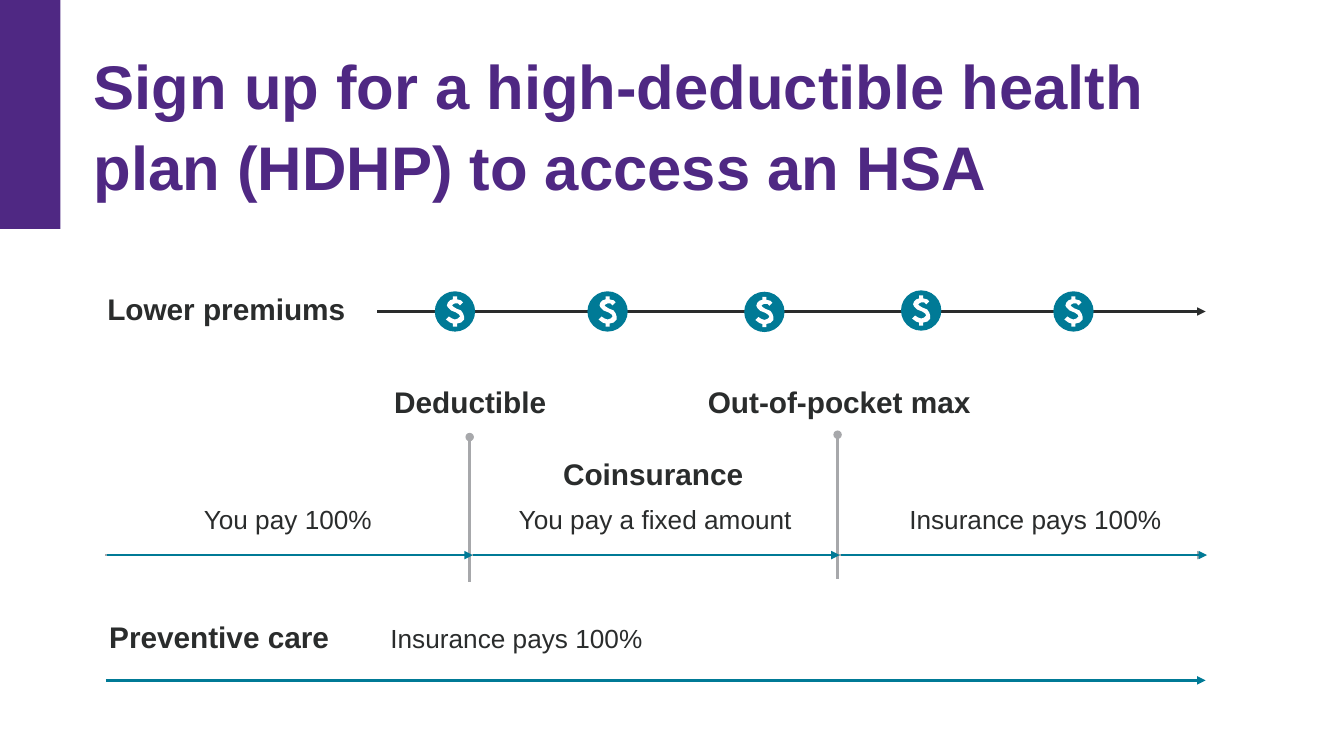
"""Build a slide explaining how a high-deductible health plan shares costs."""
from pptx import Presentation
from pptx.dml.color import RGBColor
from pptx.enum.shapes import MSO_CONNECTOR, MSO_SHAPE
from pptx.enum.text import MSO_ANCHOR, MSO_AUTO_SIZE, PP_ALIGN
from pptx.oxml.ns import qn
from pptx.util import Pt
from lxml.etree import SubElement

COLORS = {"purple": "4F2883", "teal": "007A96", "ink": "2A2C2C",
          "grey": "A7A8AB", "white": "FFFFFF"}
FONT = "Arial"
TITLE = "Sign up for a high-deductible health plan (HDHP) to access an HSA"

HEADINGS = [
    ("Lower premiums", 67, 198, 201, PP_ALIGN.LEFT),
    ("Deductible", 260.6, 264.2, 150.5, PP_ALIGN.CENTER),
    ("Out-of-pocket max", 478.8, 264.2, 241.2, PP_ALIGN.CENTER),
    ("Coinsurance", 334.8, 316, 263.5, PP_ALIGN.CENTER),
    ("Preventive care", 68.4, 432, 201, PP_ALIGN.LEFT),
]
NOTES = [
    ("You pay 100%", 75.6, 350, 260, PP_ALIGN.CENTER),
    ("You pay a fixed amount", 337.7, 350, 260.6, PP_ALIGN.CENTER),
    ("Insurance pays 100%", 600.5, 350, 278, PP_ALIGN.CENTER),
    ("Insurance pays 100%", 269.3, 434.9, 244, PP_ALIGN.LEFT),
]
DIVIDERS = [(335.5, 312.2), (598.3, 310.5)]
DIVIDER_H = 103.3
PHASES = [76.2, 338.2, 600.6]
PHASE_W, PHASE_Y = 261.6, 396.5
AXIS_LEFT, AXIS_RIGHT = 75.6, 861.2
PREMIUM_LEFT, PREMIUM_Y, PREVENTIVE_Y = 269.3, 222.5, 486
COINS = [(325, 222.5), (434, 222.5), (546, 222.8), (658, 221.8), (766.8, 222.5)]
COIN_D, DOLLAR_UNIT = 28.8, 0.72
DOLLAR = [(9, 8), (6, 11), (2, 12), (2, 15), (-2, 15), (-2, 12), (-5, 11),
          (-9, 8), (-6, 5), (-3, 7), (0, 8), (3, 7), (5, 5), (4, 3), (1, 1),
          (-4, -1), (-7, -4), (-8, -6), (-7, -9), (-5, -11), (-2, -12),
          (-2, -15), (2, -15), (2, -12), (6, -11), (8, -9), (5, -6), (3, -8),
          (0, -8), (-2, -7), (-3, -6), (-2, -5), (1, -3), (6, -1), (8, 2),
          (9, 5)]


def rgb(name):
    return RGBColor.from_string(COLORS[name])


def style_text(p, size, color, bold, align):
    p.alignment = align
    for r in p.runs:
        r.font.name, r.font.size, r.font.bold = FONT, Pt(size), bold
        r.font.color.rgb = rgb(color)


def fill_plain(sp, color):
    sp.shadow.inherit = False
    sp.fill.solid()
    sp.fill.fore_color.rgb = rgb(color)
    sp.line.fill.background()


def add_label(shapes, text, x, y, w, align, size, bold):
    tb = shapes.add_textbox(Pt(x), Pt(y), Pt(w), Pt(size * 1.15 + 19.2))
    tf = tb.text_frame
    tf.word_wrap = True
    tf.margin_left = tf.margin_right = tf.margin_top = tf.margin_bottom = Pt(9.6)
    tf.text = text
    style_text(tf.paragraphs[0], size, "ink", bold, align)


def add_line(shapes, x1, y1, x2, y2, color, head=None, tail=None):
    ln = shapes.add_connector(MSO_CONNECTOR.STRAIGHT, Pt(x1), Pt(y1), Pt(x2), Pt(y2))
    ln.line.color.rgb = rgb(color)
    ln.line.width = Pt(2)
    sp_pr = ln._element.spPr
    for tag, kind in (("a:headEnd", head), ("a:tailEnd", tail)):
        if kind:
            SubElement(sp_pr.find(qn("a:ln")), qn(tag), type=kind)
    SubElement(sp_pr, qn("a:effectLst"))


def add_coin(shapes, cx, cy):
    r = COIN_D / 2
    disc = shapes.add_shape(MSO_SHAPE.OVAL, Pt(cx - r), Pt(cy - r), Pt(COIN_D), Pt(COIN_D))
    fill_plain(disc, "teal")
    fb = shapes.build_freeform(*DOLLAR[0], scale=Pt(DOLLAR_UNIT))
    fb.add_line_segments(DOLLAR[1:], close=True)
    fill_plain(fb.convert_to_shape(Pt(cx), Pt(cy)), "white")


def main():
    prs = Presentation()
    prs.slide_width, prs.slide_height = Pt(960), Pt(540)
    slide = prs.slides.add_slide(prs.slide_layouts[5])
    shapes = slide.shapes

    bar = shapes.add_shape(MSO_SHAPE.RECTANGLE, 0, 0, Pt(43.2), Pt(163.6))
    fill_plain(bar, "purple")

    title = shapes.title
    title.left, title.top, title.width, title.height = Pt(67), Pt(28.8), Pt(853), Pt(113)
    tf = title.text_frame
    tf.text = TITLE
    tf.word_wrap = True
    tf.auto_size = MSO_AUTO_SIZE.NONE
    tf.vertical_anchor = MSO_ANCHOR.TOP
    tf.margin_left = tf.margin_right = tf.margin_top = tf.margin_bottom = 0
    tf.paragraphs[0].line_spacing = 1.1
    style_text(tf.paragraphs[0], 44, "purple", True, PP_ALIGN.LEFT)

    add_line(shapes, PREMIUM_LEFT, PREMIUM_Y, AXIS_RIGHT, PREMIUM_Y, "ink", tail="triangle")
    for cx, cy in COINS:
        add_coin(shapes, cx, cy)

    for x, y in DIVIDERS:
        add_line(shapes, x, y, x, y + DIVIDER_H, "grey", head="oval")
    for i, x in enumerate(PHASES):
        tip = "triangle" if i == len(PHASES) - 1 else None
        add_line(shapes, x - 1, PHASE_Y, x + PHASE_W - 1, PHASE_Y, "grey", tail=tip)
        add_line(shapes, x, PHASE_Y, x + PHASE_W, PHASE_Y, "teal", tail="triangle")
    add_line(shapes, AXIS_LEFT, PREVENTIVE_Y, AXIS_RIGHT, PREVENTIVE_Y, "teal", tail="triangle")

    for labels, size, bold in ((HEADINGS, 21.3, True), (NOTES, 18.7, False)):
        for label in labels:
            add_label(shapes, *label, size, bold)

    prs.save("out.pptx")


if __name__ == "__main__":
    main()
